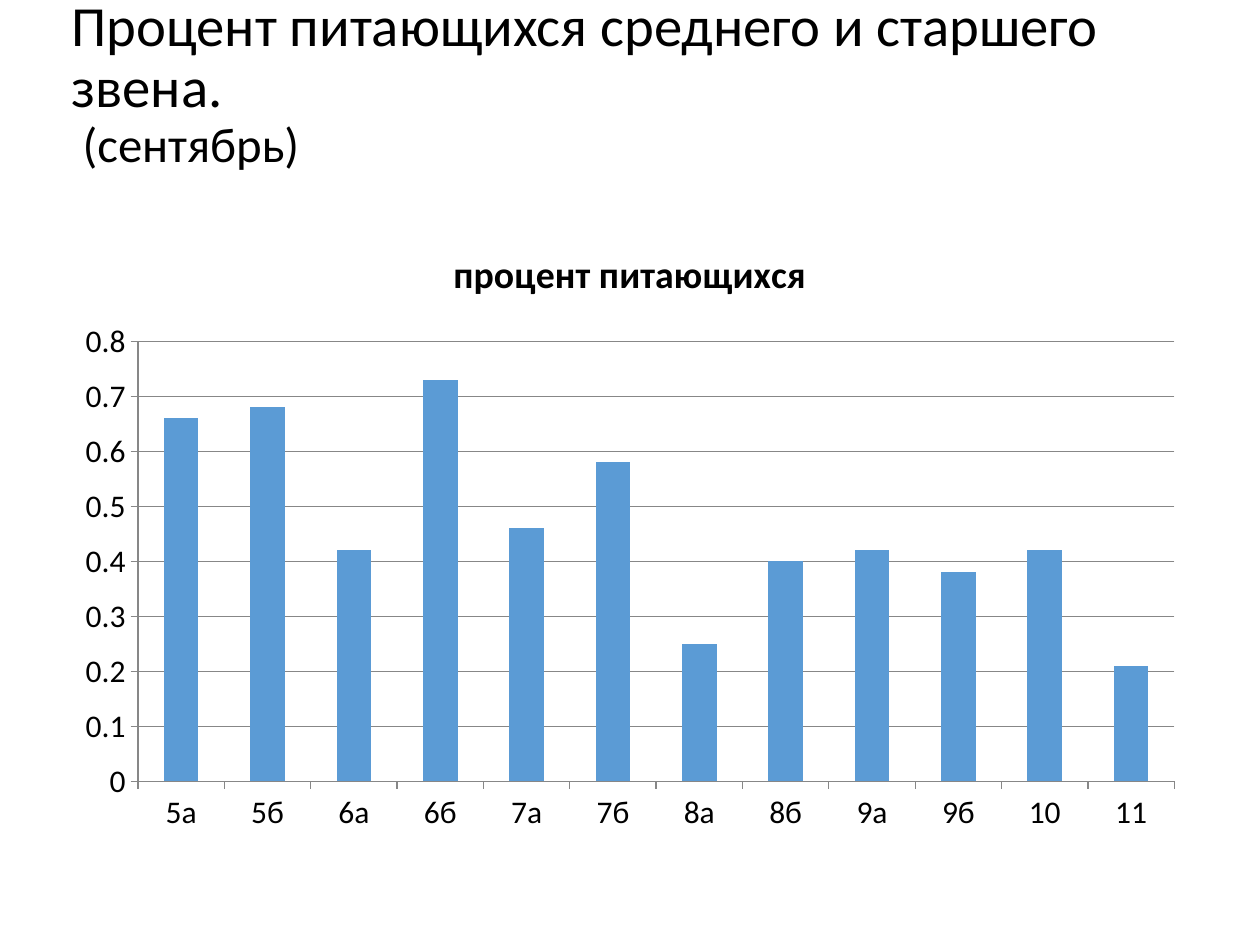
"""Build a slide with a column chart of the share of pupils eating at school."""
from pptx import Presentation
from pptx import util as u
from pptx.chart import data
from pptx.dml.color import RGBColor
from pptx.enum import chart as ch, text

BLACK = RGBColor(0, 0, 0)
BLUE = RGBColor(0x5B, 0x9B, 0xD5)
GREY = RGBColor(0x87, 0x87, 0x87)

SHARES = {
    "5а": 0.66, "5б": 0.68, "6а": 0.42, "6б": 0.73, "7а": 0.46, "7б": 0.58,
    "8а": 0.25, "8б": 0.4, "9а": 0.42, "9б": 0.38, "10": 0.42, "11": 0.21,
}


def set_font(font, size, bold=False, color=BLACK, name="Calibri"):
    font.name, font.size, font.bold = name, u.Pt(size), bold
    font.color.rgb = color


def add_text(paragraph, wording, **style):
    run = paragraph.add_run()
    run.text = wording
    set_font(run.font, **style)


class Page:
    def __init__(self, slide, size=18):
        self.slide = slide
        self.size = size

    def heading(self, lines, left, top, width, height):
        title = self.slide.shapes.title
        title.left, title.top = u.Cm(left), u.Cm(top)
        title.width, title.height = u.Cm(width), u.Cm(height)
        frame = title.text_frame
        frame.word_wrap = True
        frame.auto_size = text.MSO_AUTO_SIZE.NONE
        frame.vertical_anchor = text.MSO_ANCHOR.MIDDLE
        frame.margin_top, frame.margin_bottom = 0, u.Cm(1.52)
        for number, (wording, size) in enumerate(lines):
            paragraph = frame.add_paragraph() if number else frame.paragraphs[0]
            paragraph.alignment = text.PP_ALIGN.LEFT
            paragraph.line_spacing = 0.9
            paragraph.space_before = u.Pt(0)
            add_text(paragraph, wording, size=size)

    def columns(self, name, shares, left, top, width, height):
        table = data.CategoryChartData()
        table.categories = list(shares)
        table.add_series(name, list(shares.values()))
        box = [u.Cm(length) for length in (left, top, width, height)]
        chart = self.slide.shapes.add_chart(
            ch.XL_CHART_TYPE.COLUMN_CLUSTERED, *box, table).chart
        set_font(chart.font, self.size)
        chart.has_legend = False
        chart.has_title = True
        add_text(chart.chart_title.text_frame.paragraphs[0], name,
                 size=self.size * 1.2, bold=True)
        plot = chart.plots[0]
        plot.gap_width = 150
        plot.vary_by_categories = False
        bars = plot.series[0].format.fill
        bars.solid()
        bars.fore_color.rgb = BLUE
        for axis in (chart.category_axis, chart.value_axis):
            axis.major_tick_mark = ch.XL_TICK_MARK.OUTSIDE
            axis.format.line.color.rgb = GREY
        scale = chart.value_axis
        scale.minimum_scale, scale.maximum_scale, scale.major_unit = 0, 0.8, 0.1
        scale.has_major_gridlines = True
        scale.major_gridlines.format.line.color.rgb = GREY


def main():
    deck = Presentation()
    deck.slide_width, deck.slide_height = u.Cm(25.4), u.Cm(19.05)
    page = Page(deck.slides.add_slide(deck.slide_layouts[5]))
    page.heading(
        [("Процент питающихся среднего и старшего звена.", 32.4),
         (" (сентябрь)", 27.9)],
        left=1.19, top=0, width=22.94, height=4.95)
    page.columns("процент питающихся", SHARES,
                 left=1.27, top=4.45, width=22.86, height=12.57)
    deck.save("out.pptx")


if __name__ == "__main__":
    main()
